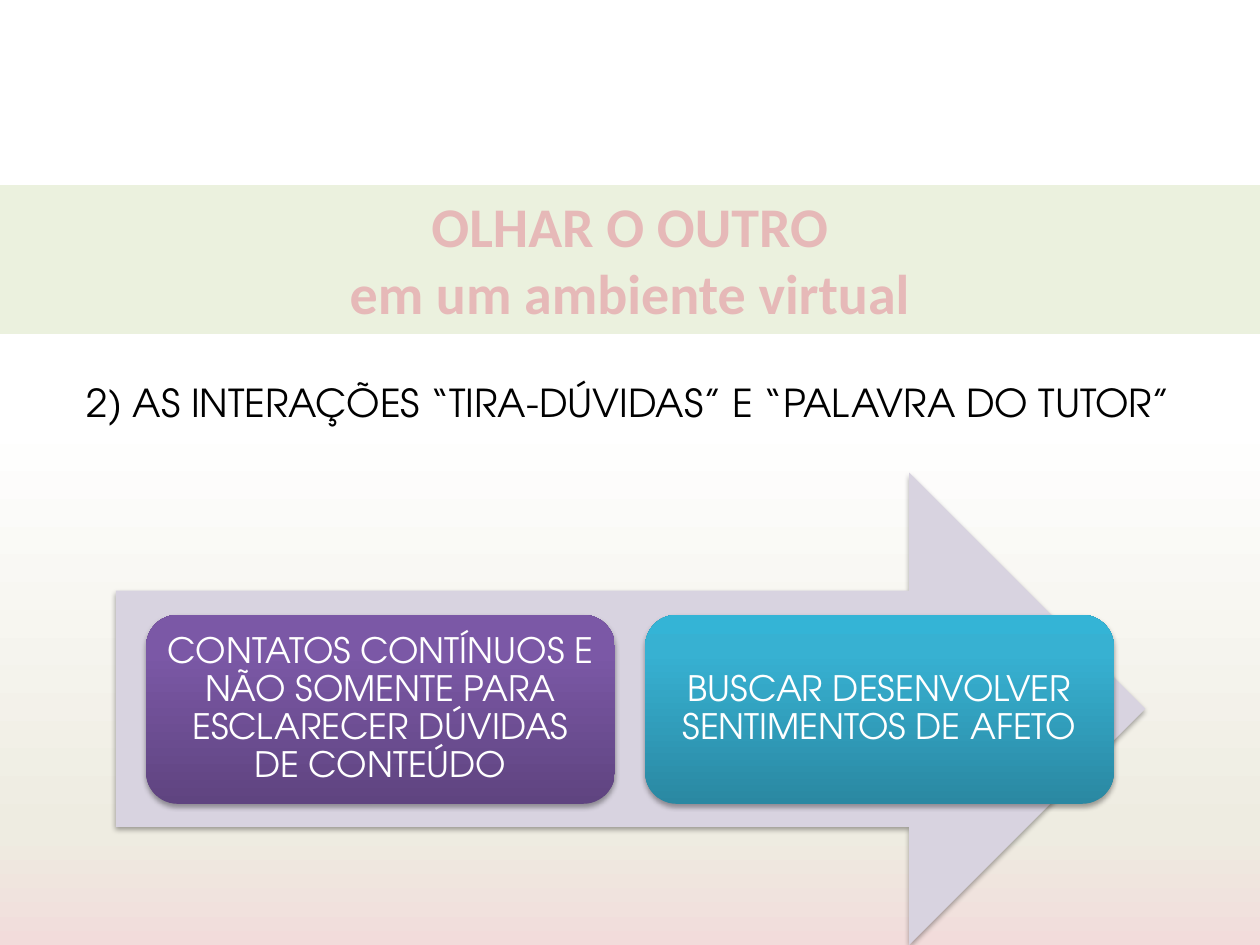
from copy import deepcopy

from lxml import etree
from pptx import Presentation
from pptx.dml.color import RGBColor
from pptx.enum.shapes import MSO_SHAPE
from pptx.enum.text import MSO_ANCHOR, MSO_AUTO_SIZE, PP_ALIGN
from pptx.oxml.ns import qn
from pptx.util import Inches, Pt

ARROW, PILL = MSO_SHAPE.RIGHT_ARROW, MSO_SHAPE.ROUNDED_RECTANGLE
TOP, MIDDLE = MSO_ANCHOR.TOP, MSO_ANCHOR.MIDDLE
CENTER = PP_ALIGN.CENTER
NO_FIT = MSO_AUTO_SIZE.NONE


def rgb(value):
    return RGBColor.from_string(value)


def child(parent, tag, **attributes):
    return etree.SubElement(parent, qn(tag), attributes)


def paint_gradient(fill, owner, stops, angle):
    fill.gradient()
    fill.gradient_angle = angle
    stop_list = next(owner.iter(qn("a:gsLst")))
    stop_list.append(deepcopy(stop_list[0]))
    for stop, (position, color) in zip(fill.gradient_stops, stops):
        stop.position = position
        stop.color.rgb = rgb(color)


def write(frame, text, *, font, size, color, bold=False, anchor=TOP,
          inset=None, spacing=None, outline=None):
    frame.word_wrap = True
    frame.auto_size = NO_FIT
    frame.vertical_anchor = anchor
    if inset is not None:
        frame.margin_left = frame.margin_right = Inches(inset)
        frame.margin_top = frame.margin_bottom = Inches(inset)
    frame.text = text
    for paragraph in frame.paragraphs:
        paragraph.alignment = CENTER
        paragraph.line_spacing = spacing
        for run in paragraph.runs:
            run.font.name, run.font.size, run.font.bold = font, Pt(size), bold
            run.font.color.rgb = rgb(color)
            if outline:
                line = etree.Element(qn("a:ln"), w=str(Pt(1.75)))
                child(child(line, "a:solidFill"), "a:srgbClr", val=outline)
                run.font._element.insert(0, line)


class InteractionSlide:
    """Holds the style and the current slide, and adds its elements."""

    heading_font = "Calibri"
    body_font = "TeX Gyre Adventor"

    def __init__(self, deck):
        self.slide = deck.slides.add_slide(deck.slide_layouts[5])

    def background(self, stops):
        paint_gradient(self.slide.background.fill, self.slide._element, stops, 270)

    def title(self, text, box):
        band = self.slide.shapes.title
        band.left, band.top, band.width, band.height = map(Inches, box)
        band.fill.solid()
        band.fill.fore_color.rgb = rgb("EBF1DE")
        write(band.text_frame, text, font=self.heading_font, size=32,
              color="E6B9B8", bold=True, outline="C0504D")

    def subtitle(self, text, box):
        label = self.slide.shapes.add_textbox(*map(Inches, box))
        write(label.text_frame, text, font=self.body_font, size=22, color="000000")

    def raised(self, kind, box):
        shape = self.slide.shapes.add_shape(kind, *map(Inches, box))
        shape.line.fill.background()
        shape.shadow.inherit = False
        effects = shape._element.spPr.find(qn("a:effectLst"))
        shadow = child(effects, "a:outerShdw", blurRad=str(Pt(3.1)),
                       dist=str(Pt(1.8)), dir="5400000", rotWithShape="0")
        child(child(shadow, "a:srgbClr", val="000000"), "a:alpha", val="35000")
        return shape

    def arrow(self, box):
        arrow = self.raised(ARROW, box)
        arrow.fill.solid()
        arrow.fill.fore_color.rgb = rgb("D8D3E0")

    def pill(self, text, box, colors):
        pill = self.raised(PILL, box)
        paint_gradient(pill.fill, pill._element, zip((0, 0.8, 1), colors), 90)
        write(pill.text_frame, text, font=self.body_font, size=20,
              color="FFFFFF", anchor=MIDDLE, inset=0.08, spacing=0.9)


def main():
    deck = Presentation()
    deck.slide_width, deck.slide_height = Inches(10), Inches(7.5)
    page = InteractionSlide(deck)
    page.background([(0.44, "FFFFFF"), (0.88, "EEECE1"), (1, "F2DCDB")])
    page.title("OLHAR O OUTRO\nem um ambiente virtual", (0, 1.47, 10, 1.18))
    page.subtitle("2) AS INTERAÇÕES “TIRA-DÚVIDAS” E “PALAVRA DO TUTOR”",
                  (0, 2.96, 9.98, 0.47))
    page.arrow((0.92, 3.75, 8.17, 3.75))
    steps = [
        ("CONTATOS CONTÍNUOS E NÃO SOMENTE PARA ESCLARECER DÚVIDAS DE CONTEÚDO",
         ("5F4480", "7B58A6", "7C57A8")),
        ("BUSCAR DESENVOLVER SENTIMENTOS DE AFETO",
         ("2A88A2", "37B1D2", "34B4D6")),
    ]
    for index, (text, colors) in enumerate(steps):
        page.pill(text, (1.16 + index * 3.96, 4.88, 3.72, 1.5), colors)
    deck.save("out.pptx")


if __name__ == "__main__":
    main()
